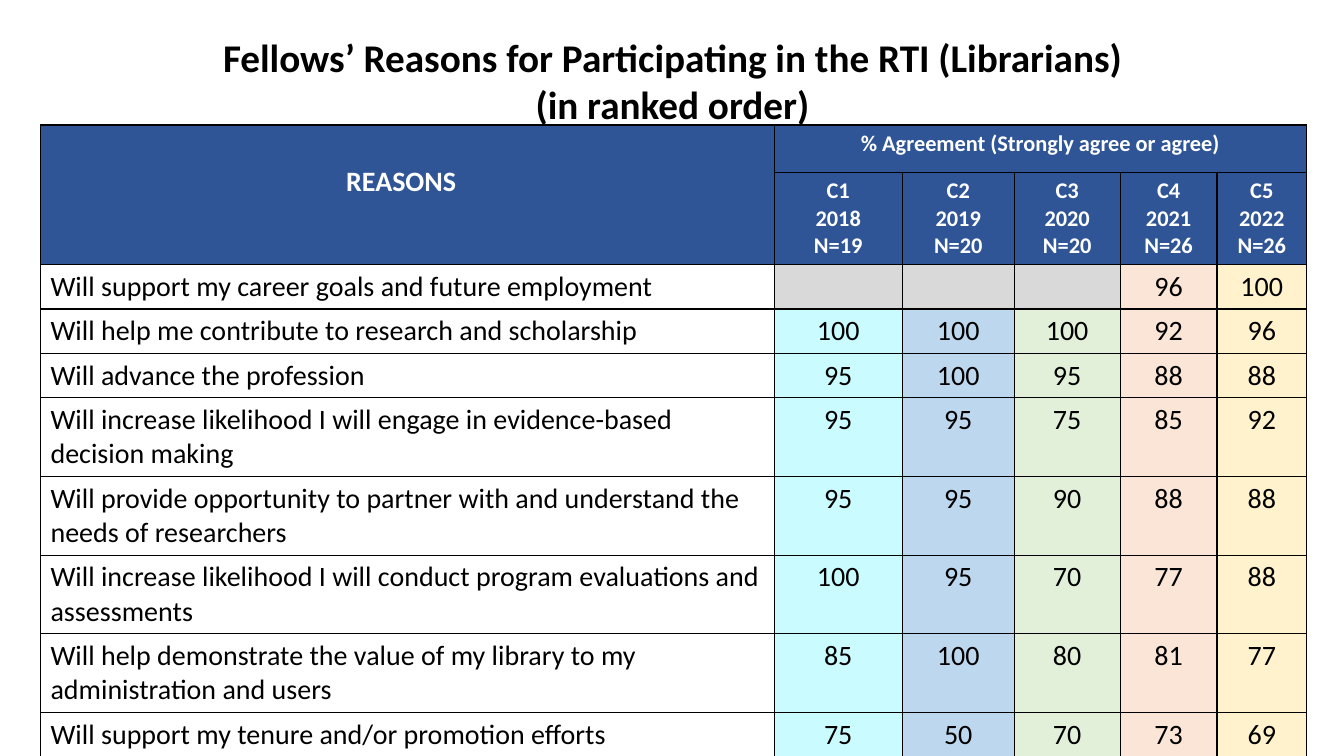
from dataclasses import dataclass

from lxml import etree
from pptx import Presentation
from pptx import util as u
from pptx.dml.color import RGBColor
from pptx.enum import text
from pptx.oxml import ns

BLACK = RGBColor(0x00, 0x00, 0x00)
WHITE = RGBColor(0xFF, 0xFF, 0xFF)
NAVY = RGBColor(0x2F, 0x55, 0x97)
GREY = RGBColor(0xD9, 0xD9, 0xD9)
CYAN = RGBColor(0xCA, 0xFC, 0xFF)
BLUE = RGBColor(0xBD, 0xD7, 0xEE)
GREEN = RGBColor(0xE2, 0xF0, 0xD9)
PEACH = RGBColor(0xFB, 0xE5, 0xD6)
YELLOW = RGBColor(0xFF, 0xF2, 0xCC)

CENTER = text.PP_ALIGN.CENTER
LEFT = text.PP_ALIGN.LEFT


@dataclass(frozen=True)
class Cohort:
    name: str
    year: int
    size: int
    width: float
    tint: RGBColor


@dataclass(frozen=True)
class Reason:
    wording: str
    scores: tuple
    height: float


ONE_LINE, TWO_LINES = 1.11, 1.97
HEADER_HEIGHTS = [1.19, 2.29]
REASON_WIDTH = 18.49

COHORTS = [
    Cohort("C1", 2018, 19, 3.23, CYAN),
    Cohort("C2", 2019, 20, 2.82, BLUE),
    Cohort("C3", 2020, 20, 2.67, GREEN),
    Cohort("C4", 2021, 26, 2.44, PEACH),
    Cohort("C5", 2022, 26, 2.26, YELLOW),
]
REASONS = [
    Reason("Will support my career goals and future employment",
           (None, None, None, 96, 100), ONE_LINE),
    Reason("Will help me contribute to research and scholarship",
           (100, 100, 100, 92, 96), ONE_LINE),
    Reason("Will advance the profession", (95, 100, 95, 88, 88), ONE_LINE),
    Reason("Will increase likelihood I will engage in evidence-based decision making",
           (95, 95, 75, 85, 92), TWO_LINES),
    Reason("Will provide opportunity to partner with and understand the needs of researchers",
           (95, 95, 90, 88, 88), TWO_LINES),
    Reason("Will increase likelihood I will conduct program evaluations and assessments",
           (100, 95, 70, 77, 88), TWO_LINES),
    Reason("Will help demonstrate the value of my library to my administration and users",
           (85, 100, 80, 81, 77), TWO_LINES),
    Reason("Will support my tenure and/or promotion efforts",
           (75, 50, 70, 73, 69), ONE_LINE),
]

TITLE = {"size": u.Pt(28), "bold": True}
CORNER = {"size": u.Pt(20), "bold": True}
HEADER = {"size": u.Pt(16), "bold": True}
BODY = {"size": u.Pt(20), "bold": False}


def write(frame, lines: list[str], style: dict, color: RGBColor, align=CENTER) -> None:
    for number, line in enumerate(lines):
        para = frame.paragraphs[0] if number == 0 else frame.add_paragraph()
        para.alignment = align
        span = para.add_run()
        span.text = line
        for key, value in {"name": "Calibri", **style}.items():
            setattr(span.font, key, value)
        span.font.color.rgb = color


def add_borders(cell) -> None:
    properties = cell._tc.get_or_add_tcPr()
    for side in ("a:lnL", "a:lnR", "a:lnT", "a:lnB"):
        line = etree.SubElement(properties, ns.qn(side), w=str(u.Pt(1)))
        fill = etree.SubElement(line, ns.qn("a:solidFill"))
        etree.SubElement(fill, ns.qn("a:srgbClr"), val=str(BLACK))


def paint(cell, color: RGBColor) -> None:
    cell.fill.solid()
    cell.fill.fore_color.rgb = color


def add_header(table) -> None:
    for row in range(len(HEADER_HEIGHTS)):
        for column in range(len(COHORTS) + 1):
            paint(table.cell(row, column), NAVY)

    corner = table.cell(0, 0)
    corner.merge(table.cell(1, 0))
    corner.margin_top, corner.margin_right = u.Cm(0.99), u.Cm(0.56)
    write(corner.text_frame, ["REASONS"], CORNER, WHITE)

    banner = table.cell(0, 1)
    banner.merge(table.cell(0, len(COHORTS)))
    write(banner.text_frame, ["% Agreement (Strongly agree or agree)"], HEADER, WHITE)

    for column, cohort in enumerate(COHORTS, start=1):
        lines = [cohort.name, str(cohort.year), f"N={cohort.size}"]
        write(table.cell(1, column).text_frame, lines, HEADER, WHITE)


def add_reason(table, row: int, reason: Reason) -> None:
    label = table.cell(row, 0)
    paint(label, WHITE)
    write(label.text_frame, [reason.wording], BODY, BLACK, LEFT)
    for column, (cohort, score) in enumerate(zip(COHORTS, reason.scores), start=1):
        cell = table.cell(row, column)
        if score is None:
            paint(cell, GREY)
        else:
            paint(cell, cohort.tint)
            write(cell.text_frame, [str(score)], BODY, BLACK)


def add_reasons_table(page) -> None:
    widths = [REASON_WIDTH] + [cohort.width for cohort in COHORTS]
    heights = HEADER_HEIGHTS + [reason.height for reason in REASONS]
    table = page.shapes.add_table(
        len(heights), len(widths), u.Cm(1.02), u.Cm(3.15),
        u.Cm(sum(widths)), u.Cm(sum(heights))).table
    for column, width in zip(table.columns, widths):
        column.width = u.Cm(width)
    for row, height in zip(table.rows, heights):
        row.height = u.Cm(height)
    for cell in table.iter_cells():
        add_borders(cell)
    add_header(table)
    for row, reason in enumerate(REASONS, start=len(HEADER_HEIGHTS)):
        add_reason(table, row, reason)


def add_title(page) -> None:
    box = page.shapes.add_textbox(u.Cm(0.36), u.Cm(0.71), u.Cm(33.17), u.Cm(2.64))
    box.text_frame.word_wrap = True
    write(box.text_frame,
          ["Fellows’ Reasons for Participating in the RTI (Librarians)", "(in ranked order)"],
          TITLE, BLACK)


def main() -> None:
    deck = Presentation()
    deck.slide_width, deck.slide_height = u.Cm(33.87), u.Cm(19.05)
    page = deck.slides.add_slide(deck.slide_layouts[6])
    add_reasons_table(page)
    add_title(page)
    deck.save("out.pptx")


if __name__ == "__main__":
    main()
